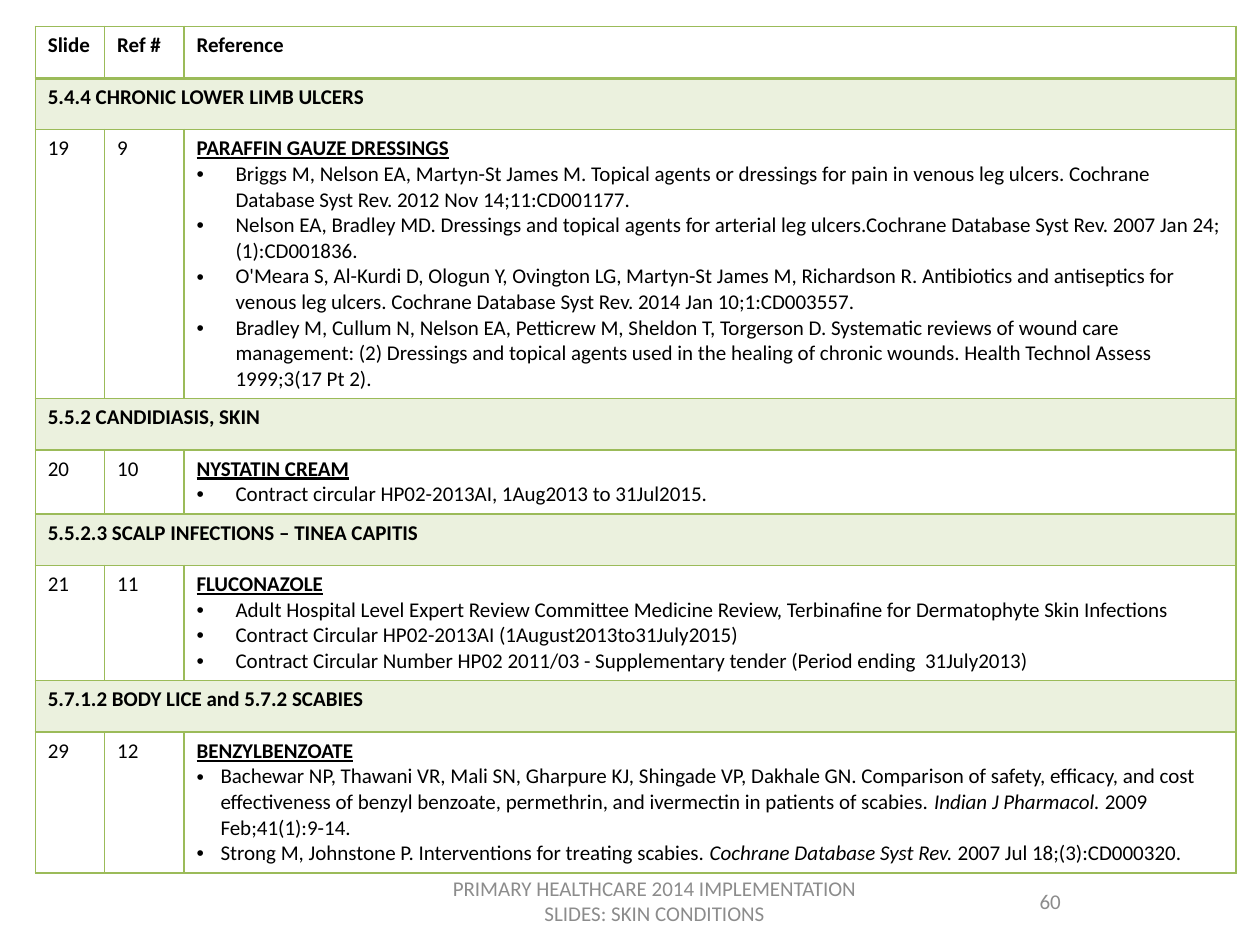
import pptx
import pptx.dml.color
import pptx.enum.text
import pptx.oxml.ns
import pptx.util
from lxml import etree

Inches = pptx.util.Inches
Pt = pptx.util.Pt
qn = pptx.oxml.ns.qn
RGBColor = pptx.dml.color.RGBColor

GREEN = RGBColor(0x9B, 0xBB, 0x59)
PALE = RGBColor(0xEB, 0xF1, 0xDE)
BLACK = RGBColor(0, 0, 0)
GRAY = RGBColor(0x8C, 0x8C, 0x8C)
BASE = {"name": "Calibri", "size": Pt(12), "bold": False}
BOLD = {"bold": True}
TITLE = {"bold": True, "underline": True}


def write(para, text, color, form):
    run = para.add_run()
    run.text = text
    for key, value in {**BASE, **form}.items():
        setattr(run.font, key, value)
    run.font.color.rgb = color


def border(cell, widths):
    props = cell._tc.get_or_add_tcPr()
    for side, width in widths.items():
        line = etree.SubElement(props, qn(f"a:ln{side}"), w=str(Pt(width)))
        fill = etree.SubElement(line, qn("a:solidFill"))
        etree.SubElement(fill, qn("a:srgbClr"), val=str(GREEN))


topics = [
    ("5.4.4 CHRONIC LOWER LIMB ULCERS", "19", "9", "PARAFFIN GAUZE DRESSINGS", 0.31, [
        ["Briggs M, Nelson EA, Martyn-St James M. Topical agents or dressings for pain in "
         "venous leg ulcers. Cochrane Database Syst Rev. 2012 Nov 14;11:CD001177."],
        ["Nelson EA, Bradley MD. Dressings and topical agents for arterial leg "
         "ulcers.Cochrane Database Syst Rev. 2007 Jan 24;(1):CD001836."],
        ["O'Meara S, Al-Kurdi D, Ologun Y, Ovington LG, Martyn-St James M, Richardson R. "
         "Antibiotics and antiseptics for venous leg ulcers. Cochrane Database Syst Rev. "
         "2014 Jan 10;1:CD003557."],
        ["Bradley M, Cullum N, Nelson EA, Petticrew M, Sheldon T, Torgerson D. Systematic "
         "reviews of wound care management: (2) Dressings and topical agents used in the "
         "healing of chronic wounds. Health Technol Assess 1999;3(17 Pt 2)."],
    ]),
    ("5.5.2 CANDIDIASIS, SKIN", "20", "10", "NYSTATIN CREAM", 0.31, [
        ["Contract circular HP02-2013AI, 1Aug2013 to 31Jul2015."],
    ]),
    ("5.5.2.3 SCALP INFECTIONS – TINEA CAPITIS", "21", "11", "FLUCONAZOLE", 0.31, [
        ["Adult Hospital Level Expert Review Committee Medicine Review, Terbinafine for "
         "Dermatophyte Skin Infections"],
        ["Contract Circular HP02-2013AI (1August2013to31July2015)"],
        ["Contract Circular Number HP02 2011/03 - Supplementary tender "
         "(Period ending  31July2013)"],
    ]),
    ("5.7.1.2 BODY LICE and 5.7.2 SCABIES", "29", "12", "BENZYLBENZOATE", 0.19, [
        ["Bachewar NP, Thawani VR, Mali SN, Gharpure KJ, Shingade VP, Dakhale GN. "
         "Comparison of safety, efficacy, and cost effectiveness of benzyl benzoate, "
         "permethrin, and ivermectin in patients of scabies. ",
         "Indian J Pharmacol.", " 2009 Feb;41(1):9-14."],
        ["Strong M, Johnstone P. Interventions for treating scabies. ",
         "Cochrane Database Syst Rev. ", "2007 Jul 18;(3):CD000320."],
    ]),
]

deck = pptx.Presentation()
deck.slide_width = Inches(10)
deck.slide_height = Inches(7.5)
slide = deck.slides.add_slide(deck.slide_layouts[6])

count = 1 + 2 * len(topics)
table = slide.shapes.add_table(
    count, 3, Inches(0.28), Inches(0.21), Inches(9.53), Inches(0.41 * count)).table
table.first_row = False
table.horz_banding = False
for col, width in zip(table.columns, (0.55, 0.63, 8.35)):
    col.width = Inches(width)

for row in range(count):
    table.rows[row].height = Inches(0.41)
    band = row % 2 == 1
    for col in range(3):
        cell = table.cell(row, col)
        border(cell, {"L": 1, "R": 1, "T": 2 if row == 1 else 1, "B": 2 if row == 0 else 1})
        if band:
            cell.fill.solid()
            cell.fill.fore_color.rgb = PALE
        else:
            cell.fill.background()
    if band:
        table.cell(row, 0).merge(table.cell(row, 2))

for col, label in enumerate(("Slide", "Ref #", "Reference")):
    write(table.cell(0, col).text_frame.paragraphs[0], label, BLACK, BOLD)

for index, (head, page, ref, name, indent, items) in enumerate(topics):
    row = 2 * index + 1
    for down, col, text, form in (
            (0, 0, head, BOLD), (1, 0, page, {}), (1, 1, ref, {}), (1, 2, name, TITLE)):
        write(table.cell(row + down, col).text_frame.paragraphs[0], text, BLACK, form)
    frame = table.cell(row + 1, 2).text_frame
    for item in items:
        para = frame.add_paragraph()
        props = para._p.get_or_add_pPr()
        props.set("marL", str(Inches(indent)))
        props.set("indent", str(-Inches(indent)))
        etree.SubElement(props, qn("a:buFont"), typeface="Arial")
        etree.SubElement(props, qn("a:buChar"), char="•")
        for part, text in enumerate(item):
            write(para, text, BLACK, {"italic": part % 2 == 1})

for left, width, text in (
        (3.42, 3.55, "PRIMARY HEALTHCARE 2014 IMPLEMENTATION SLIDES: SKIN CONDITIONS"),
        (7.17, 2.33, "60")):
    frame = slide.shapes.add_textbox(
        Inches(left), Inches(6.95), Inches(width), Inches(0.4)).text_frame
    frame.word_wrap = True
    frame.vertical_anchor = pptx.enum.text.MSO_ANCHOR.MIDDLE
    para = frame.paragraphs[0]
    para.alignment = pptx.enum.text.PP_ALIGN.CENTER
    write(para, text, GRAY, {})

deck.save("out.pptx")
